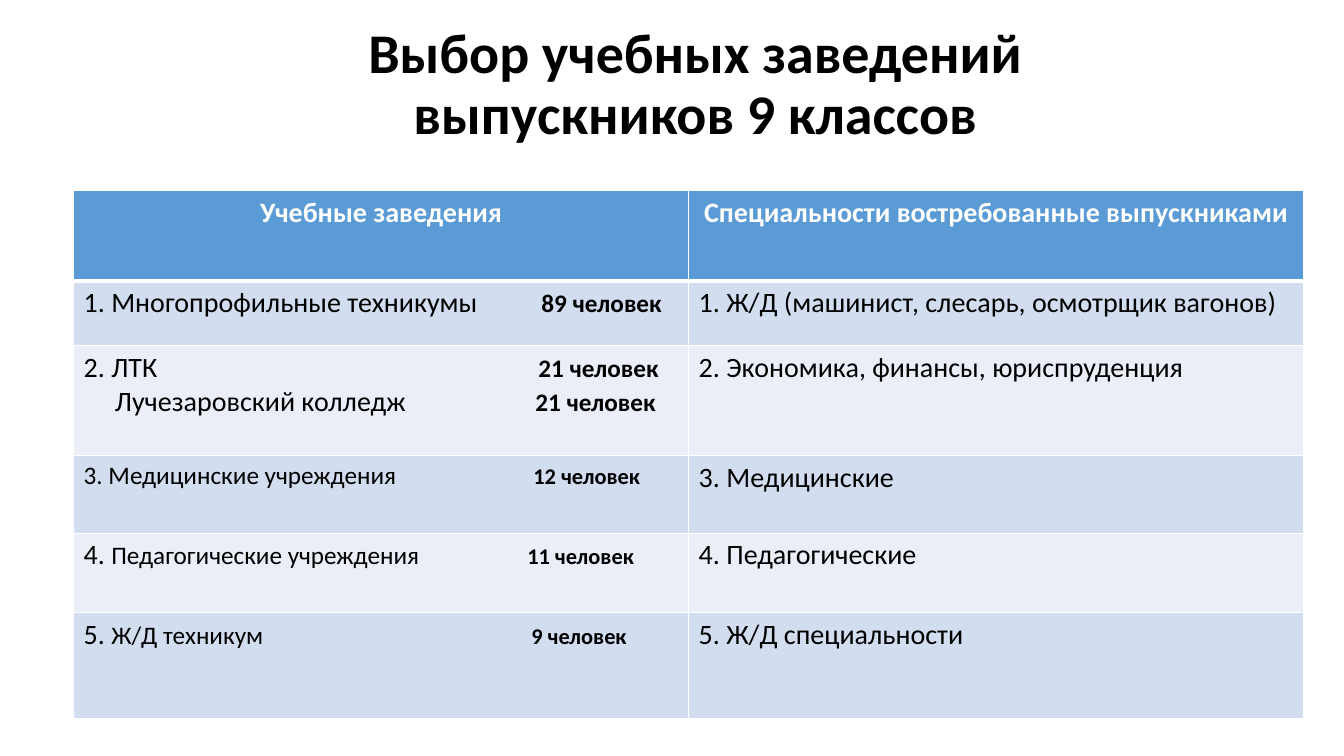
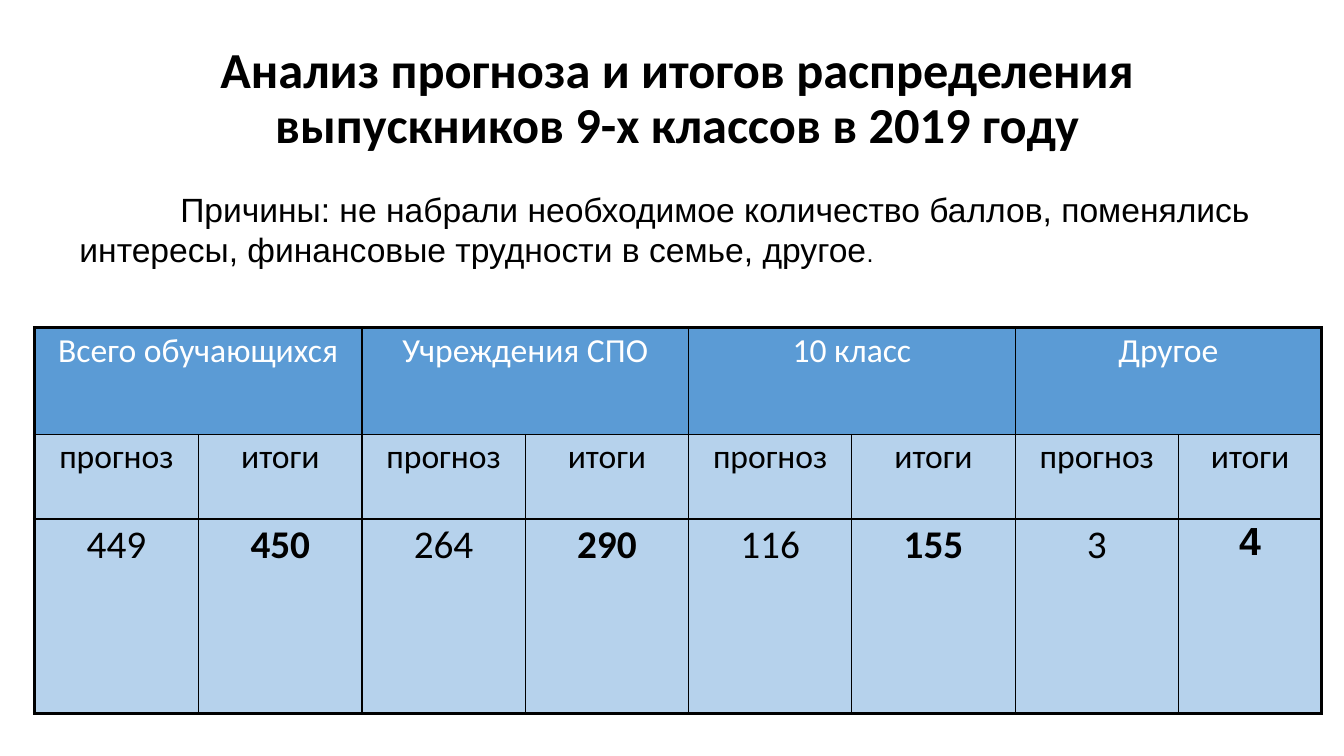
from lxml import etree
from pptx import Presentation
from pptx.dml.color import RGBColor
from pptx.enum.text import MSO_ANCHOR, PP_ALIGN
from pptx.oxml.ns import qn
from pptx.util import Inches, Pt

LEFT, CENTER = PP_ALIGN.LEFT, PP_ALIGN.CENTER
TOP, BOTTOM = MSO_ANCHOR.TOP, MSO_ANCHOR.BOTTOM
BLACK, WHITE, BLUE = "000000", "FFFFFF", "5B9BD5"
BANDS = ["D2DEEF", "EAEFF7"]
LIGHT_BLUE = "B6D2EC"
TITLE_FONT, BODY_FONT = "Calibri", "Arial"


def rgb(value):
    return RGBColor.from_string(value)


def style_run(r, size, bold=False, color=BLACK, font=TITLE_FONT):
    r.font.size = Pt(size)
    r.font.bold = bold
    r.font.name = font
    r.font.color.rgb = rgb(color)


def add_run(p, text, size, **style):
    r = p.add_run()
    r.text = text
    style_run(r, size, **style)


def add_textbox(slide, left, top, width, height, anchor=TOP):
    tf = slide.shapes.add_textbox(
        Inches(left), Inches(top), Inches(width), Inches(height)).text_frame
    tf.word_wrap = True
    tf.vertical_anchor = anchor
    return tf


def add_title(slide, lines, size, left, top, width, height):
    tf = add_textbox(slide, left, top, width, height, BOTTOM)
    p = tf.paragraphs[0]
    p.text = "\v".join(lines)
    p.alignment = CENTER
    p.line_spacing = 0.9
    for r in p.runs:
        style_run(r, size, bold=True)


def add_table(slide, left, top, widths, heights):
    table = slide.shapes.add_table(
        len(heights), len(widths), Inches(left), Inches(top),
        Inches(sum(widths)), Inches(sum(heights))).table
    table.first_row = False
    table.horz_banding = False
    for column, width in zip(table.columns, widths):
        column.width = Inches(width)
    for row, height in zip(table.rows, heights):
        row.height = Inches(height)
    return table


def fill_cell(cell, color):
    cell.fill.solid()
    cell.fill.fore_color.rgb = rgb(color)


def set_borders(cell, color, widths):
    tc_pr = cell._tc.get_or_add_tcPr()
    for i, (side, width) in enumerate(zip("LRTB", widths)):
        ln = etree.Element(qn(f"a:ln{side}"), w=str(Pt(width)))
        fill = etree.SubElement(ln, qn("a:solidFill"))
        etree.SubElement(fill, qn("a:srgbClr"), val=color)
        tc_pr.insert(i, ln)


def set_tab_stops(p, stops):
    tab_list = etree.SubElement(p._p.get_or_add_pPr(), qn("a:tabLst"))
    for stop in stops:
        etree.SubElement(tab_list, qn("a:tab"), pos=str(Inches(stop)), algn="l")


def build_choice_slide(prs):
    slide = prs.slides.add_slide(prs.slide_layouts[6])
    add_title(slide, ["Выбор учебных заведений", "выпускников 9 классов"],
              40, 0.92, 0.2, 11.95, 1.3)
    headers = ["Учебные заведения", "Специальности востребованные выпускниками"]
    rows = [
        ([([("1. Многопрофильные техникумы", 20)], "89 человек", 18, [4.54])],
         "1. Ж/Д (машинист, слесарь, осмотрщик вагонов)"),
        ([([("2. ЛТК", 20)], "21 человек", 18, [4.51]),
          ([("\tЛучезаровский колледж", 20)], "21 человек", 18, [0.31, 4.48])],
         "2. Экономика, финансы, юриспруденция"),
        ([([("3. Медицинские учреждения", 18)], "12 человек", 16, [4.46])],
         "3. Медицинские"),
        ([([("4. ", 20), ("Педагогические учреждения", 18)],
           "11 человек", 16, [4.4])],
         "4. Педагогические"),
        ([([("5. ", 20), ("Ж/Д техникум", 18)], "9 человек", 16, [4.44])],
         "5. Ж/Д специальности"),
    ]
    table = add_table(slide, 0.73, 1.89, [6.1, 6.1],
                      [0.9, 0.64, 1.09, 0.77, 0.79, 1.05])
    for cell, header in zip(table.rows[0].cells, headers):
        p = cell.text_frame.paragraphs[0]
        p.alignment = CENTER
        add_run(p, header, 20, bold=True, color=WHITE)
        fill_cell(cell, BLUE)
        set_borders(cell, WHITE, [1, 1, 1, 3])
    for i, (schools, specialty) in enumerate(rows):
        school_cell, specialty_cell = table.rows[i + 1].cells
        tf = school_cell.text_frame
        for j, (names, count, count_size, stops) in enumerate(schools):
            p = tf.add_paragraph() if j else tf.paragraphs[0]
            set_tab_stops(p, stops)
            for text, size in names:
                add_run(p, text, size)
            add_run(p, "\t" + count, count_size, bold=True)
        add_run(specialty_cell.text_frame.paragraphs[0], specialty, 20)
        for cell in (school_cell, specialty_cell):
            fill_cell(cell, BANDS[i % 2])
            set_borders(cell, WHITE, [1, 1, 1 if i else 3, 1])


def build_forecast_slide(prs):
    slide = prs.slides.add_slide(prs.slide_layouts[6])
    add_title(slide, ["Анализ прогноза и итогов распределения "
                      "выпускников 9-х классов в 2019 году"],
              36, 0.69, 0.48, 12.06, 1.1)
    groups = [("Всего обучающихся", 449, 450), ("Учреждения СПО", 264, 290),
              ("10 класс", 116, 155), ("Другое", 3, 4)]
    header_row, kind_row, value_row = [], [], []
    for name, forecast, result in groups:
        header_row += [name, ""]
        kind_row += ["прогноз", "итоги"]
        value_row += [str(forecast), str(result)]
    texts = [header_row, kind_row, value_row]
    table = add_table(slide, 0.34, 3.25, [1.63] + [1.62] * 6 + [1.42],
                      [1.06, 0.84, 1.93])
    last_row, last_col = len(texts) - 1, len(header_row) - 1
    for col in range(0, last_col, 2):
        table.cell(0, col).merge(table.cell(0, col + 1))
    for i, row in enumerate(texts):
        for j, text in enumerate(row):
            cell = table.cell(i, j)
            fill_cell(cell, LIGHT_BLUE if i else BLUE)
            right_col = j + 1 if cell.is_merge_origin else j
            edges = [j == 0, right_col == last_col, i == 0, i == last_row]
            set_borders(cell, BLACK, [2.25 if edge else 1 for edge in edges])
            if cell.is_spanned:
                continue
            p = cell.text_frame.paragraphs[0]
            p.alignment = CENTER
            p.line_spacing = 0.9
            p.space_before = Pt(10)
            is_value = i == last_row
            add_run(p, text, 28 if is_value else 24,
                    bold=is_value and j % 2 == 1,
                    color=BLACK if i else WHITE,
                    font=BODY_FONT if is_value and j == last_col else TITLE_FONT)
    p = add_textbox(slide, 0.69, 1.82, 12.16, 0.91).paragraphs[0]
    p.alignment = LEFT
    p._p.get_or_add_pPr().set("indent", str(Inches(1)))
    add_run(p, "Причины: не набрали необходимое количество баллов, поменялись "
            "интересы, финансовые трудности в семье, другое", 24, font=BODY_FONT)
    add_run(p, ".", 18, font=BODY_FONT)


def main():
    prs = Presentation()
    prs.slide_width = Inches(13.33)
    prs.slide_height = Inches(7.5)
    build_choice_slide(prs)
    build_forecast_slide(prs)
    prs.save("out.pptx")


if __name__ == "__main__":
    main()
